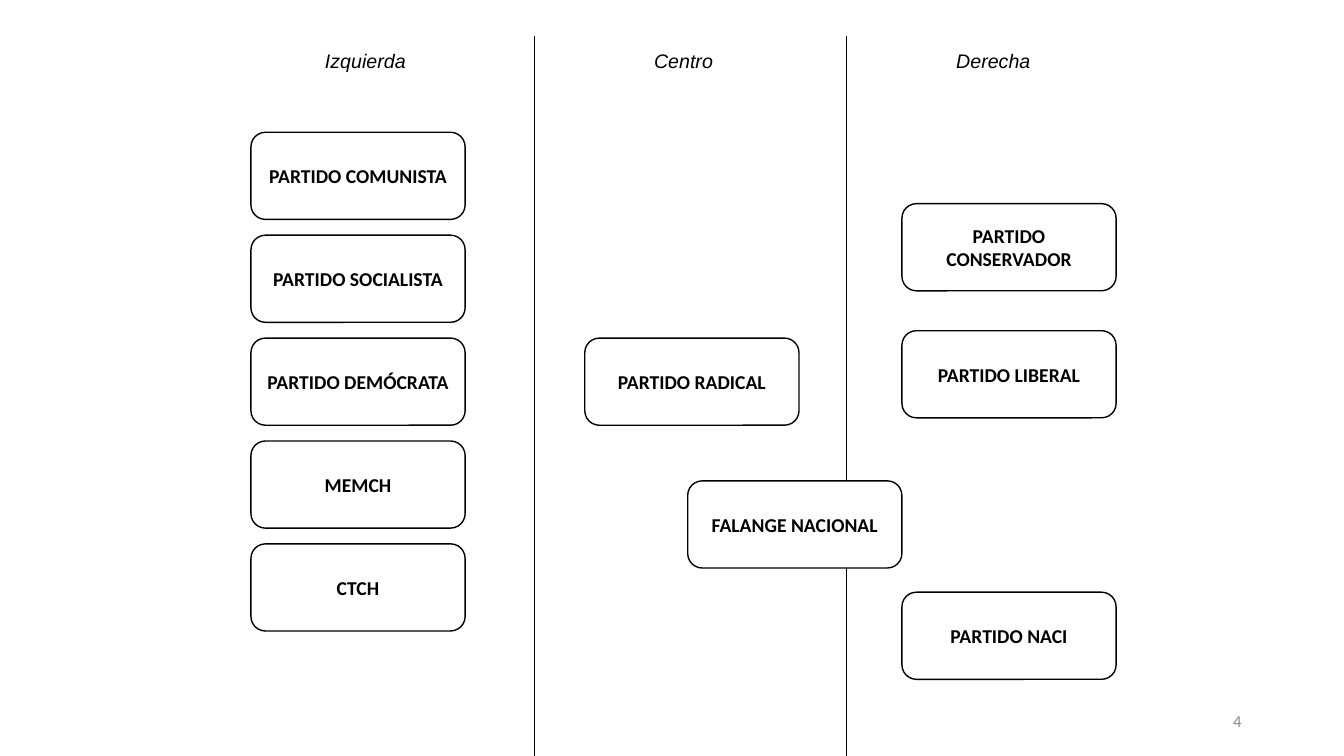
from dataclasses import dataclass

from lxml.etree import SubElement
from pptx import Presentation
from pptx.dml.color import RGBColor
from pptx.enum.shapes import MSO_CONNECTOR as Connector, MSO_SHAPE as Shape
from pptx.enum.text import MSO_ANCHOR as Anchor, PP_ALIGN as Align
from pptx.oxml.ns import qn
from pptx.slide import Slide
from pptx.text.text import TextFrame
from pptx.util import Emu, Pt

EMU_PER_PX = 9525


def px(n: int) -> Emu:
    return Emu(n * EMU_PER_PX)


@dataclass(frozen=True)
class Style:
    font: str
    size: int
    color: RGBColor
    bold: bool = False
    italic: bool = False


@dataclass(frozen=True)
class Theme:
    ink: RGBColor = RGBColor(0x00, 0x00, 0x00)
    paper: RGBColor = RGBColor(0xFF, 0xFF, 0xFF)
    party: Style = Style("Calibri", 14, ink, bold=True)
    heading: Style = Style("Arial", 14, ink, italic=True)
    number: Style = Style("Calibri", 12, RGBColor(0x89, 0x89, 0x89))
    box_line: float = 1
    divider_line: float = 0.5


@dataclass(frozen=True)
class Heading:
    text: str
    left: int


@dataclass(frozen=True)
class Party:
    name: str
    left: int
    top: int


THEME = Theme()
SLIDE_W, SLIDE_H = 1280, 720
BOX_W, BOX_H = 204, 83
HEADING_TOP, HEADING_W, HEADING_H = 42, 234, 33
DIVIDER_TOP = 34
DIVIDERS = (509, 806)
LEFT_X, LEFT_TOP, LEFT_STEP = 239, 126, 98
CENTER_X, RIGHT_X = 557, 859

HEADINGS = (
    Heading("Izquierda", 231),
    Heading("Centro", 534),
    Heading("Derecha", 829),
)
LEFT_NAMES = (
    "PARTIDO COMUNISTA",
    "PARTIDO SOCIALISTA",
    "PARTIDO DEMÓCRATA",
    "MEMCH",
    "CTCH",
)
PARTIES = (
    *(Party(name, LEFT_X, LEFT_TOP + i * LEFT_STEP) for i, name in enumerate(LEFT_NAMES)),
    Party("PARTIDO RADICAL", CENTER_X, LEFT_TOP + 2 * LEFT_STEP),
    Party("FALANGE NACIONAL", 655, 458),
    Party("PARTIDO CONSERVADOR", RIGHT_X, 194),
    Party("PARTIDO LIBERAL", RIGHT_X, 315),
    Party("PARTIDO NACI", RIGHT_X, 564),
)


def write(tf: TextFrame, text: str, style: Style, align: Align, anchor: Anchor) -> None:
    tf.word_wrap = True
    tf.vertical_anchor = anchor
    p = tf.paragraphs[0]
    p.alignment = align
    r = p.add_run()
    r.text = text
    r.font.name = style.font
    r.font.size = Pt(style.size)
    r.font.bold = style.bold
    r.font.italic = style.italic
    r.font.color.rgb = style.color


def add_divider(s: Slide, x: int) -> None:
    line = s.shapes.add_connector(
        Connector.STRAIGHT, px(x), px(DIVIDER_TOP), px(x), px(SLIDE_H)
    )
    line.line.color.rgb = THEME.ink
    line.line.width = Pt(THEME.divider_line)
    SubElement(line._element.spPr, qn("a:effectLst"))


def add_heading(s: Slide, heading: Heading) -> None:
    sp = s.shapes.add_textbox(
        px(heading.left), px(HEADING_TOP), px(HEADING_W), px(HEADING_H)
    )
    write(sp.text_frame, heading.text, THEME.heading, Align.CENTER, Anchor.TOP)


def add_party(s: Slide, party: Party) -> None:
    sp = s.shapes.add_shape(
        Shape.ROUNDED_RECTANGLE, px(party.left), px(party.top), px(BOX_W), px(BOX_H)
    )
    sp.shadow.inherit = False
    sp.fill.solid()
    sp.fill.fore_color.rgb = THEME.paper
    sp.line.color.rgb = THEME.ink
    sp.line.width = Pt(THEME.box_line)
    write(sp.text_frame, party.name, THEME.party, Align.CENTER, Anchor.MIDDLE)


def add_number(s: Slide, text: str) -> None:
    sp = s.shapes.add_textbox(px(904), px(667), px(288), px(38))
    write(sp.text_frame, text, THEME.number, Align.RIGHT, Anchor.MIDDLE)


def main() -> None:
    prs = Presentation()
    prs.slide_width, prs.slide_height = px(SLIDE_W), px(SLIDE_H)
    s = prs.slides.add_slide(prs.slide_layouts[6])
    for x in DIVIDERS:
        add_divider(s, x)
    for heading in HEADINGS:
        add_heading(s, heading)
    for party in PARTIES:
        add_party(s, party)
    add_number(s, "4")
    prs.save("out.pptx")


if __name__ == "__main__":
    main()
